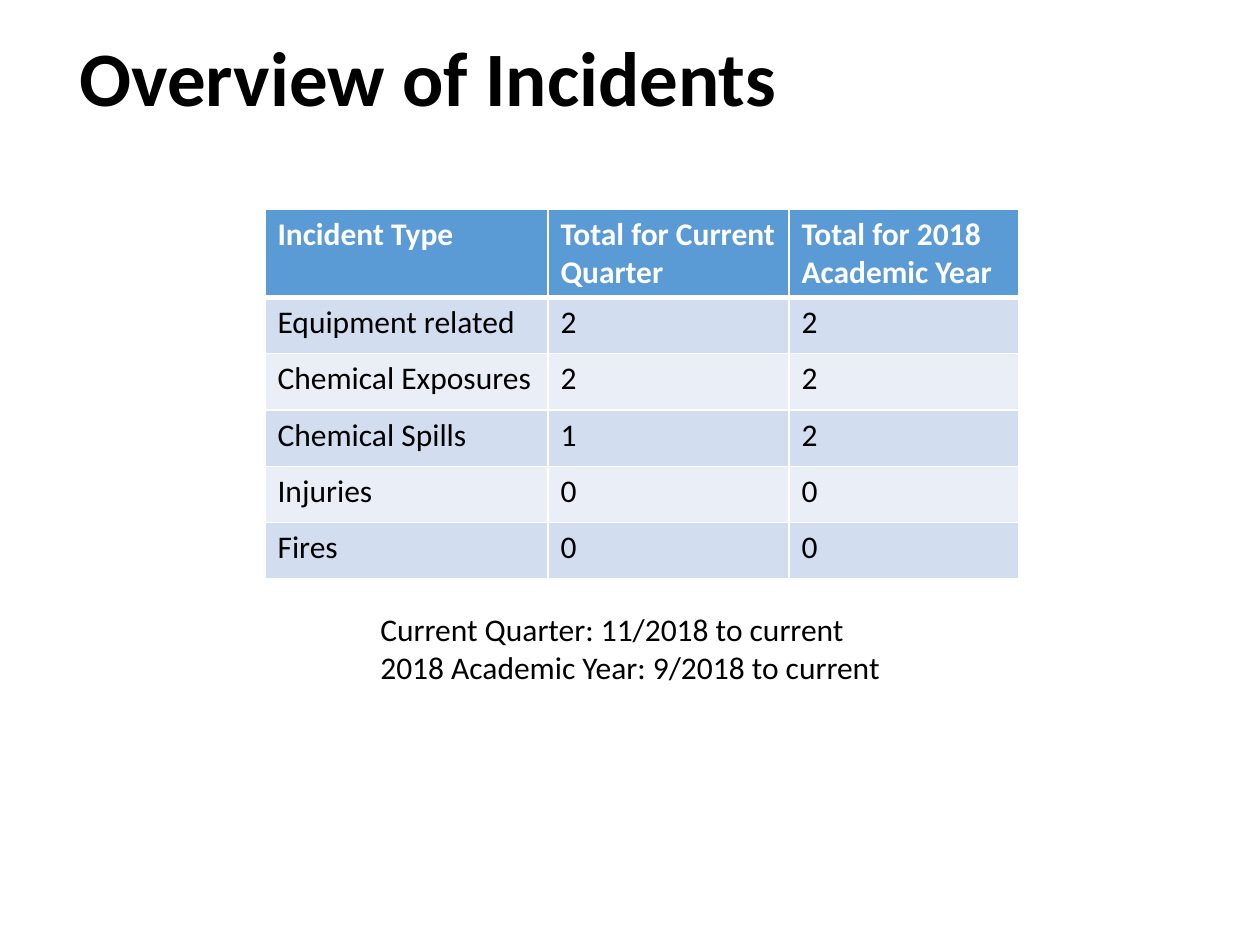
from dataclasses import dataclass

from lxml.etree import SubElement
from pptx import Presentation
from pptx.dml.color import RGBColor
from pptx.enum.text import MSO_ANCHOR as Anchor, MSO_AUTO_SIZE as AutoSize
from pptx.oxml.ns import qn
from pptx.util import Pt


@dataclass(frozen=True)
class Theme:
    font: str = "Calibri"
    text: str = "000000"
    white: str = "FFFFFF"
    header: str = "5B9BD5"
    bands: tuple = ("D2DEEF", "EAEFF7")
    title_size: int = 44
    body_size: int = 18
    thin_border: int = 1
    header_border: int = 3


THEME = Theme()

HEADINGS = ("Incident Type", "Total for Current Quarter", "Total for 2018 Academic Year")
INCIDENTS = (
    ("Equipment related", 2, 2),
    ("Chemical Exposures", 2, 2),
    ("Chemical Spills", 1, 2),
    ("Injuries", 0, 0),
    ("Fires", 0, 0),
)
PERIODS = ("Current Quarter: 11/2018 to current", "2018 Academic Year: 9/2018 to current")

COLUMN_WIDTHS = (283, 241, 230)
HEADER_HEIGHT = 88
BODY_HEIGHT = 282


def px(length):
    """Turn pixels, 126 to the inch, into EMU."""
    return round(length * 914400 / 126)


def style_paragraph(paragraph, size, color, bold=False):
    font = paragraph.font
    font.name = THEME.font
    font.size = Pt(size)
    font.bold = bold
    font.color.rgb = RGBColor.from_string(color)


def add_text(slide, box, lines, size, bold=False):
    shape = slide.shapes.add_textbox(*map(px, box))
    frame = shape.text_frame
    frame.text = "\n".join(lines)
    for paragraph in frame.paragraphs:
        style_paragraph(paragraph, size, THEME.text, bold)
    return frame


def set_border(cell, side, width):
    properties = cell._tc.get_or_add_tcPr()
    line = SubElement(properties, qn(f"a:ln{side}"), w=str(Pt(width)))
    fill = SubElement(line, qn("a:solidFill"))
    SubElement(fill, qn("a:srgbClr"), val=THEME.white)


def fill_cell(cell, value, row_index):
    is_header = row_index == 0
    cell.text = str(value)
    style_paragraph(cell.text_frame.paragraphs[0], THEME.body_size,
                    THEME.white if is_header else THEME.text, is_header)
    # Borders come before the fill in the cell properties
    heavy_side = {0: "B", 1: "T"}.get(row_index)
    for side in "LRTB":
        set_border(cell, side, THEME.header_border if side == heavy_side else THEME.thin_border)
    color = THEME.header if is_header else THEME.bands[(row_index - 1) % 2]
    cell.fill.solid()
    cell.fill.fore_color.rgb = RGBColor.from_string(color)


def add_incident_table(slide, left, top):
    rows = (HEADINGS, *INCIDENTS)
    table = slide.shapes.add_table(
        len(rows), len(HEADINGS), px(left), px(top),
        px(sum(COLUMN_WIDTHS)), px(HEADER_HEIGHT + BODY_HEIGHT)).table
    for column, width in zip(table.columns, COLUMN_WIDTHS):
        column.width = px(width)
    for row_index, values in enumerate(rows):
        height = BODY_HEIGHT / len(INCIDENTS) if row_index else HEADER_HEIGHT
        table.rows[row_index].height = px(height)
        for column_index, value in enumerate(values):
            fill_cell(table.cell(row_index, column_index), value, row_index)


def main():
    presentation = Presentation()
    presentation.slide_width, presentation.slide_height = px(1260), px(945)
    slide = presentation.slides.add_slide(presentation.slide_layouts[6])

    # Title
    title = add_text(slide, (67, 19, 1086, 126), ["Overview of Incidents"],
                     THEME.title_size, bold=True)
    title.word_wrap = True
    title.vertical_anchor = Anchor.MIDDLE
    title.paragraphs[0].line_spacing = 0.9

    # Incident counts
    add_incident_table(slide, 265, 209)

    # Reporting periods
    periods = add_text(slide, (368, 604, 530, 127), PERIODS, THEME.body_size)
    periods.word_wrap = False
    periods.auto_size = AutoSize.SHAPE_TO_FIT_TEXT

    presentation.save("out.pptx")


if __name__ == "__main__":
    main()
